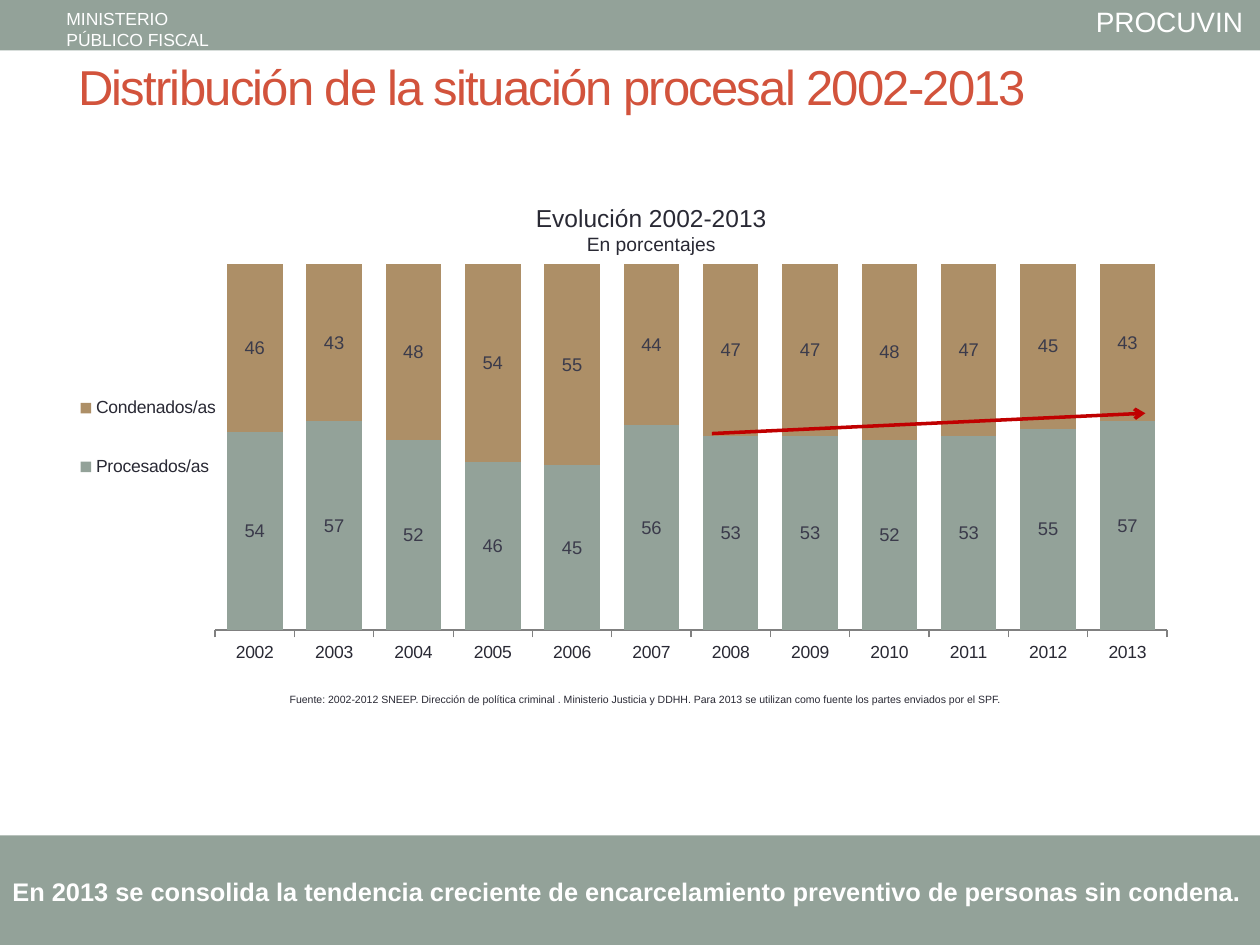
import pptx
import pptx.chart.data
import pptx.dml.color
import pptx.enum.chart
import pptx.enum.shapes
import pptx.enum.text
import pptx.oxml
import pptx.oxml.ns
import pptx.util
from lxml import etree

Cm, Pt = pptx.util.Cm, pptx.util.Pt
RGBColor = pptx.dml.color.RGBColor
qn = pptx.oxml.ns.qn

FONT = "Arial"
SAGE = RGBColor(0x93, 0xA2, 0x99)
TAN = RGBColor(0xAD, 0x8F, 0x67)
RUST = RGBColor(0xD2, 0x53, 0x3C)
RED = RGBColor(0xC0, 0x00, 0x00)
INK = RGBColor(0x29, 0x29, 0x34)
LABEL_INK = RGBColor(0x3B, 0x3B, 0x4B)
AXIS_GREY = RGBColor(0x80, 0x80, 0x80)
WHITE = RGBColor(0xFF, 0xFF, 0xFF)

YEARS = [str(year) for year in range(2002, 2014)]
ON_TRIAL = [54, 57, 52, 46, 45, 56, 53, 53, 52, 53, 55, 57]
CONVICTED = [100 - share for share in ON_TRIAL]


def set_font(font, size, color, bold=None):
    font.name = FONT
    font.size = Pt(size)
    font.color.rgb = color
    font.bold = bold


def add_band(page, left, top, width, height):
    band = page.shapes.add_shape(pptx.enum.shapes.MSO_SHAPE.RECTANGLE,
                                 Cm(left), Cm(top), Cm(width), Cm(height))
    band.shadow.inherit = False
    band.fill.solid()
    band.fill.fore_color.rgb = SAGE
    band.line.fill.background()


def add_text(page, left, top, width, height, lines, color, wrap=True, align=None, bold=None):
    """Write one paragraph for each (text, size) pair."""
    box = page.shapes.add_textbox(Cm(left), Cm(top), Cm(width), Cm(height))
    frame = box.text_frame
    frame.word_wrap = wrap
    frame.text = "\n".join(text for text, size in lines)
    for para, (text, size) in zip(frame.paragraphs, lines):
        para.alignment = align
        for span in para.runs:
            set_font(span.font, size, color, bold)


def add_header(page, left, top, width, height):
    add_band(page, left, top, width, height)
    add_text(page, left + width - 3.56, top - 0.03, 3.51, 0.94,
             [("PROCUVIN", 16)], WHITE, wrap=False)
    add_text(page, left + 1.09, top + 0.03, 3.4, 1.12,
             [("MINISTERIO", 10), ("PÚBLICO FISCAL", 10)], WHITE, wrap=False)


def format_title(page, left, top, width, height):
    title = page.shapes.title
    title.left, title.top, title.width, title.height = Cm(left), Cm(top), Cm(width), Cm(height)
    frame = title.text_frame
    frame.text = "Distribución de la situación procesal 2002-2013"
    frame.vertical_anchor = pptx.enum.text.MSO_ANCHOR.MIDDLE
    para = frame.paragraphs[0]
    para.alignment = pptx.enum.text.PP_ALIGN.LEFT
    span = para.runs[0]
    set_font(span.font, 28, RUST)
    span.font._element.set("spc", "-100")


def make_layout(left, top, width, height, inner=False):
    """Build a manual chart layout from fractions of the chart's box."""
    layout = etree.Element(qn("c:layout"))
    manual = etree.SubElement(layout, qn("c:manualLayout"))
    settings = [("layoutTarget", "inner")] if inner else []
    settings += [("xMode", "edge"), ("yMode", "edge"),
                 ("x", left), ("y", top), ("w", width), ("h", height)]
    for name, value in settings:
        etree.SubElement(manual, qn("c:" + name)).set("val", str(value))
    return layout


def add_status_chart(page, left, top, width, height):
    data = pptx.chart.data.CategoryChartData(number_format="0")
    data.categories = YEARS
    data.add_series("Procesados/as", ON_TRIAL)
    data.add_series("Condenados/as", CONVICTED)
    chart = page.shapes.add_chart(pptx.enum.chart.XL_CHART_TYPE.COLUMN_STACKED_100,
                                  Cm(left), Cm(top), Cm(width), Cm(height), data).chart
    chart.has_title = False
    set_font(chart.font, 18, INK)

    # Columns and their labels
    plot = chart.plots[0]
    plot.gap_width, plot.overlap, plot.vary_by_categories = 43, 100, False
    for series, color in zip(plot.series, (SAGE, TAN)):
        series.format.fill.solid()
        series.format.fill.fore_color.rgb = color
        labels = series.data_labels
        labels.show_value = True
        labels.number_format, labels.number_format_is_linked = "0", False
        set_font(labels.font, 10.5, LABEL_INK)

    # Axes
    years = chart.category_axis
    years.major_tick_mark = pptx.enum.chart.XL_TICK_MARK.OUTSIDE
    years.format.line.color.rgb = AXIS_GREY
    set_font(years.tick_labels.font, 10, INK)
    shares = chart.value_axis
    shares.minimum_scale, shares.maximum_scale = 0, 1
    shares.has_major_gridlines = False
    shares.visible = False

    # Legend to the left of the columns
    chart.has_legend = True
    chart.legend.position = pptx.enum.chart.XL_LEGEND_POSITION.RIGHT
    chart.legend.include_in_layout = False
    set_font(chart.legend.font, 10, INK)
    chart.element.find(".//" + qn("c:legendPos")).addnext(make_layout(0.01, 0.31, 0.13, 0.3))

    plot_area = chart.element.find(".//" + qn("c:plotArea"))
    for old_layout in plot_area.findall(qn("c:layout")):
        plot_area.remove(old_layout)
    plot_area.insert(0, make_layout(0.135, 0.129, 0.853, 0.698, inner=True))


def add_chart_region(page, left, top, width, height):
    add_status_chart(page, left, top, width, height)
    add_text(page, left + 7.87, top, 7.92, 1.37,
             [("Evolución 2002-2013", 14), ("En porcentajes", 11)], INK,
             align=pptx.enum.text.PP_ALIGN.CENTER)
    add_text(page, left + 4.29, top + 9.88, 15.09, 0.51,
             [("Fuente: 2002-2012 SNEEP. Dirección de política criminal . Ministerio Justicia "
               "y DDHH. Para 2013 se utilizan como fuente los partes enviados por el SPF.", 6)],
             INK, wrap=False)


def add_trend_arrow(page, start_x, start_y, end_x, end_y):
    arrow = page.shapes.add_connector(pptx.enum.shapes.MSO_CONNECTOR.STRAIGHT,
                                      Cm(start_x), Cm(start_y), Cm(end_x), Cm(end_y))
    arrow.line.color.rgb = RED
    arrow.line.width = Pt(2)
    etree.SubElement(arrow.line._get_or_add_ln(), qn("a:tailEnd")).set("type", "arrow")
    etree.SubElement(arrow._element.spPr, qn("a:effectLst"))


def add_conclusion(page, left, top, width, height):
    add_band(page, left, top, width, height)
    add_text(page, left, top + 0.69, width + 0.71, 0.89,
             [("En 2013 se consolida la tendencia creciente de encarcelamiento preventivo "
               "de personas sin condena.", 14.5)], WHITE, bold=True)


def main():
    deck = pptx.Presentation()
    deck.slide_width, deck.slide_height = Cm(25.4), Cm(19.05)
    page = deck.slides.add_slide(deck.slide_layouts[5])
    add_header(page, 0, 0, 25.4, 1.02)
    format_title(page, 1.32, 0.15, 22.86, 3.18)
    add_chart_region(page, 1.3, 3.96, 22.5, 10.57)
    add_trend_arrow(page, 14.35, 8.74, 23.09, 8.33)
    add_conclusion(page, 0, 16.84, 25.4, 2.34)
    deck.save("out.pptx")


if __name__ == "__main__":
    main()
